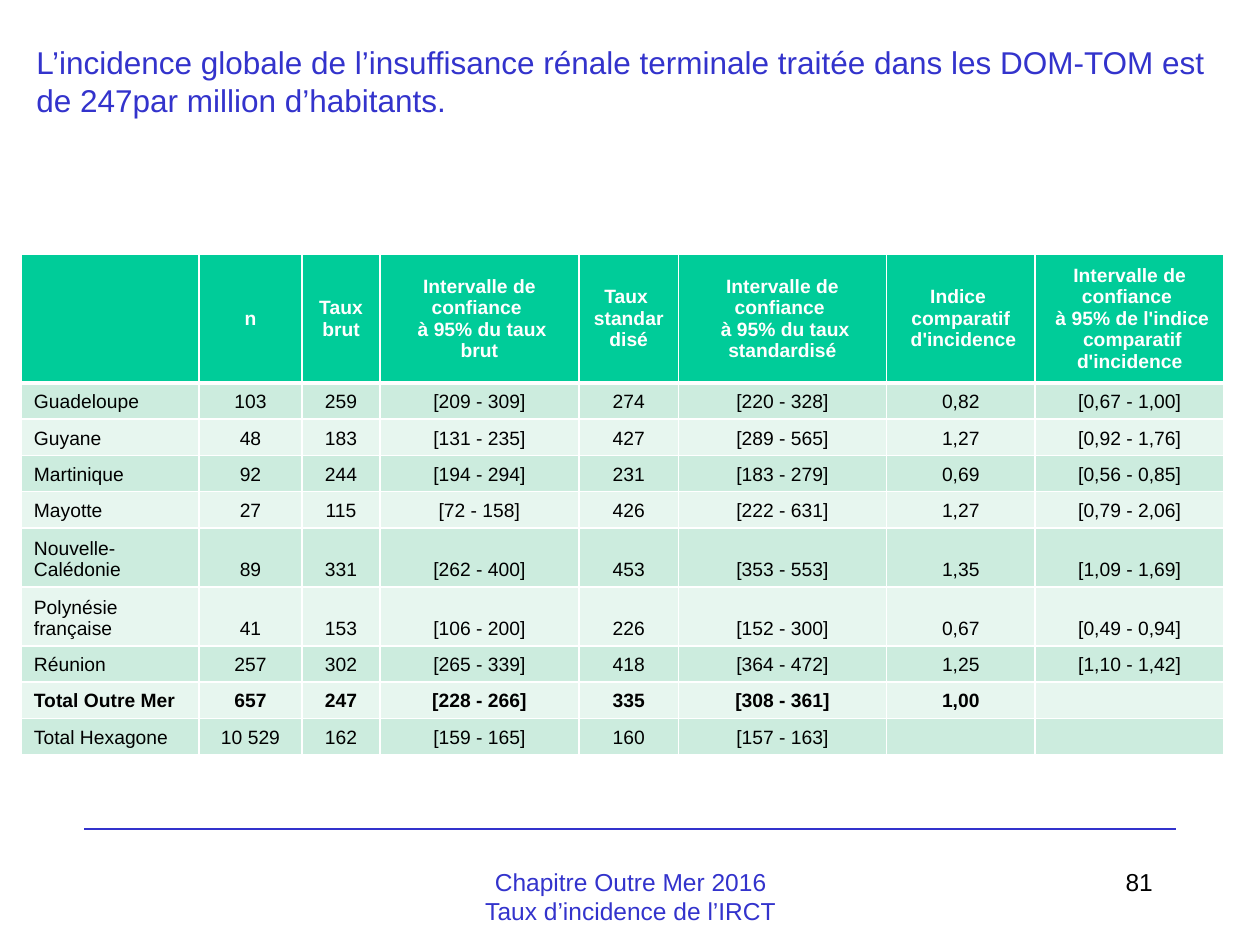
from typing import NamedTuple

from lxml.etree import SubElement
from pptx import Presentation
from pptx.dml.color import RGBColor
from pptx.enum.shapes import MSO_CONNECTOR
from pptx.enum.text import MSO_ANCHOR, MSO_AUTO_SIZE, PP_ALIGN
from pptx.oxml.ns import qn
from pptx.slide import Slide
from pptx.table import Table
from pptx.text.text import TextFrame
from pptx.util import Cm, Pt

BLUE, BLACK, WHITE = "3333CC", "000000", "FFFFFF"
GREEN = "00CC99"
BANDS = ("CCECDE", "E7F6EF")


class Box(NamedTuple):
    left: float
    top: float
    width: float
    height: float


class Label(NamedTuple):
    box: Box
    text: str
    align: PP_ALIGN
    color: str


class Row(NamedTuple):
    cells: tuple[str, ...]
    height: float = 0.73
    bold: bool = False


TITLE = Label(
    Box(0.48, 0.74, 24.41, 1.8),
    "L’incidence globale de l’insuffisance rénale terminale traitée "
    "dans les DOM-TOM est de 247par million d’habitants.",
    PP_ALIGN.LEFT,
    BLUE,
)
LABELS = (
    Label(Box(18.21, 17.35, 5.28, 1.27), "81", PP_ALIGN.RIGHT, BLACK),
    Label(
        Box(8.69, 17.35, 8.05, 1.27),
        "Chapitre Outre Mer 2016\nTaux d’incidence de l’IRCT",
        PP_ALIGN.CENTER,
        BLUE,
    ),
)
GRID = Box(0.43, 5.13, 24.25, 10.08)
WIDTHS = (3.58, 2.08, 1.57, 4.01, 2.01, 4.19, 3.0, 3.81)
ROWS = (
    Row((
        "",
        "n",
        "Taux brut",
        "Intervalle de confiance \n à 95% du taux brut",
        "Taux \nstandardisé",
        "Intervalle de confiance \n à 95% du taux standardisé",
        "Indice \n comparatif \n d'incidence",
        "Intervalle de confiance \n à 95% de l'indice \n comparatif d'incidence",
    ), 2.59, True),
    Row(("Guadeloupe", "103", "259", "[209 - 309]", "274", "[220 - 328]", "0,82", "[0,67 - 1,00]")),
    Row(("Guyane", "48", "183", "[131 - 235]", "427", "[289 - 565]", "1,27", "[0,92 - 1,76]")),
    Row(("Martinique", "92", "244", "[194 - 294]", "231", "[183 - 279]", "0,69", "[0,56 - 0,85]")),
    Row(("Mayotte", "27", "115", "[72 - 158]", "426", "[222 - 631]", "1,27", "[0,79 - 2,06]")),
    Row(("Nouvelle-Calédonie", "89", "331", "[262 - 400]", "453", "[353 - 553]", "1,35", "[1,09 - 1,69]"), 1.19),
    Row(("Polynésie française", "41", "153", "[106 - 200]", "226", "[152 - 300]", "0,67", "[0,49 - 0,94]"), 1.19),
    Row(("Réunion", "257", "302", "[265 - 339]", "418", "[364 - 472]", "1,25", "[1,10 - 1,42]")),
    Row(("Total Outre Mer", "657", "247", "[228 - 266]", "335", "[308 - 361]", "1,00", ""), bold=True),
    Row(("Total Hexagone", "10 529", "162", "[159 - 165]", "160", "[157 - 163]", "", "")),
)


def paint(color: str) -> RGBColor:
    return RGBColor.from_string(color)


def place(box: Box) -> tuple[Cm, ...]:
    return tuple(Cm(size) for size in box)


def write(frame: TextFrame, text: str, size: int, color: str, align: PP_ALIGN, bold: bool = False) -> None:
    frame.text = text
    for para in frame.paragraphs:
        para.alignment = align
        for run in para.runs:
            font = run.font
            font.name, font.size, font.bold = "Arial", Pt(size), bold
            font.color.rgb = paint(color)
        if not para.runs:
            SubElement(para._p, qn("a:endParaRPr"), sz=str(size * 100))


def edge(cell, side: str, width: int) -> None:
    line = SubElement(cell._tc.get_or_add_tcPr(), qn(f"a:ln{side}"), w=str(Pt(width)))
    fill = SubElement(line, qn("a:solidFill"))
    SubElement(fill, qn("a:srgbClr"), val=WHITE)


def fill_row(table: Table, index: int, row: Row) -> None:
    table.rows[index].height = Cm(row.height)
    head = index == 0
    for col, text in enumerate(row.cells):
        cell = table.cell(index, col)
        align = PP_ALIGN.CENTER if head or col else PP_ALIGN.LEFT
        write(cell.text_frame, text, 11, WHITE if head else BLACK, align, row.bold)
        cell.vertical_anchor = MSO_ANCHOR.MIDDLE if head else MSO_ANCHOR.BOTTOM
        for side in "LRTB":
            thick = (index, side) in ((0, "B"), (1, "T"))
            edge(cell, side, 3 if thick else 1)
        cell.fill.solid()
        cell.fill.fore_color.rgb = paint(GREEN if head else BANDS[(index - 1) % 2])


def add_grid(slide: Slide) -> None:
    table = slide.shapes.add_table(len(ROWS), len(WIDTHS), *place(GRID)).table
    for col, width in zip(table.columns, WIDTHS):
        col.width = Cm(width)
    for index, row in enumerate(ROWS):
        fill_row(table, index, row)


def add_title(slide: Slide) -> None:
    title = slide.shapes.title
    title.left, title.top, title.width, title.height = place(TITLE.box)
    frame = title.text_frame
    write(frame, TITLE.text, 18, TITLE.color, TITLE.align)
    frame.word_wrap = True
    frame.vertical_anchor = MSO_ANCHOR.TOP
    frame.auto_size = MSO_AUTO_SIZE.SHAPE_TO_FIT_TEXT


def add_label(slide: Slide, label: Label) -> None:
    frame = slide.shapes.add_textbox(*place(label.box)).text_frame
    frame.word_wrap = True
    write(frame, label.text, 14, label.color, label.align)


def add_rule(slide: Slide) -> None:
    rule = slide.shapes.add_connector(MSO_CONNECTOR.STRAIGHT, Cm(1.7), Cm(16.71), Cm(23.7), Cm(16.71))
    rule.line.color.rgb = paint(BLUE)
    rule.line.width = Pt(1)
    SubElement(rule._element.spPr, qn("a:effectLst"))


def main() -> None:
    deck = Presentation()
    deck.slide_width, deck.slide_height = Cm(25.4), Cm(19.05)
    slide = deck.slides.add_slide(deck.slide_layouts[5])
    add_rule(slide)
    for label in LABELS:
        add_label(slide, label)
    add_title(slide)
    add_grid(slide)
    deck.save("out.pptx")


if __name__ == "__main__":
    main()
